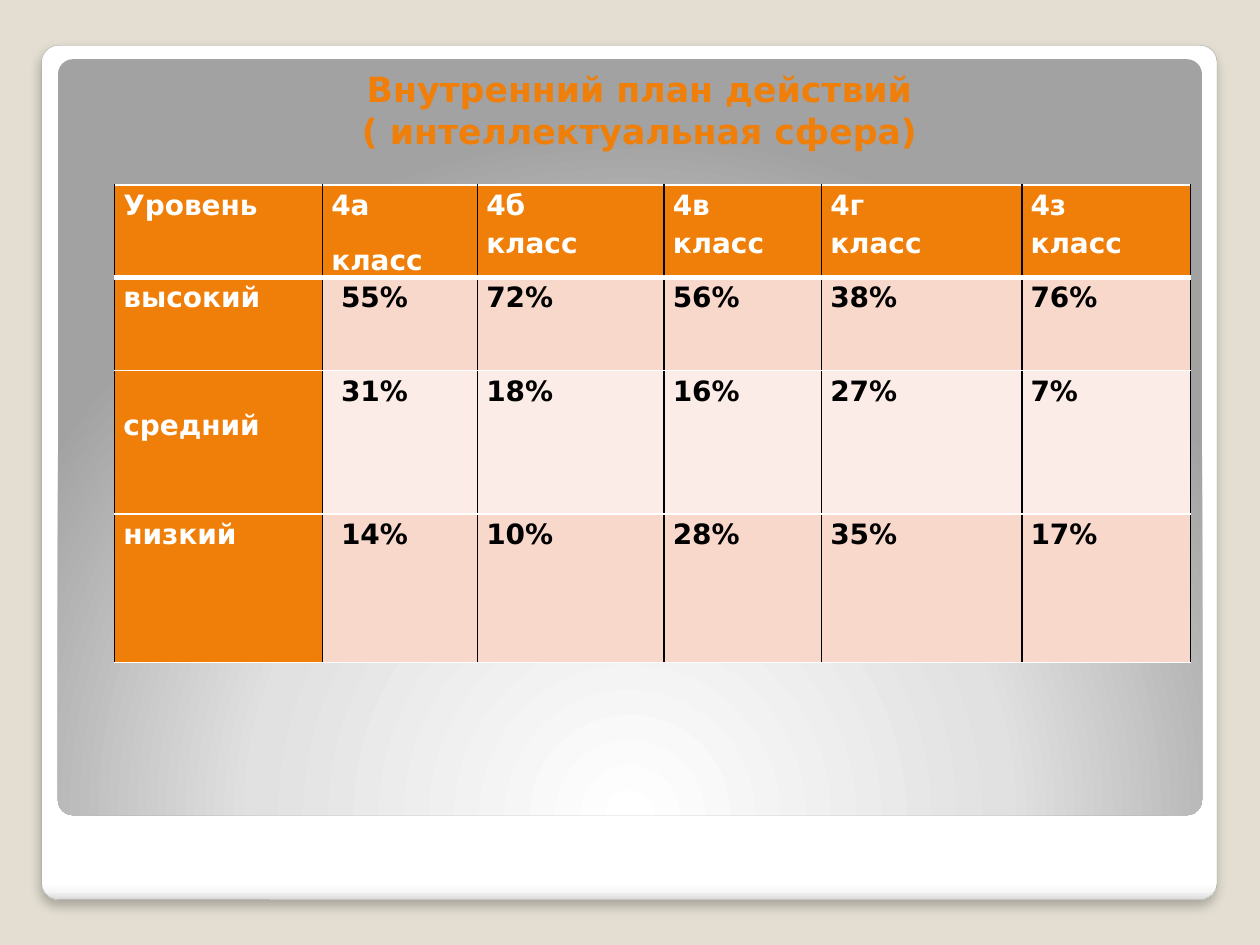
from pptx import Presentation
from pptx.dml.color import RGBColor
from pptx.enum.shapes import MSO_SHAPE
from pptx.enum.text import MSO_ANCHOR, MSO_AUTO_SIZE, PP_ALIGN
from pptx.oxml import parse_xml
from pptx.oxml.ns import nsdecls, qn
from pptx.util import Inches, Pt

TITLE = "Внутренний план действий\v( интеллектуальная сфера)"
HEADER = ["Уровень", "4а\nкласс", "4б\nкласс", "4в\nкласс", "4г\nкласс", "4з\nкласс"]
LEVELS = [
    ["высокий", " 55%", "72%", "56%", "38%", "76%"],
    ["средний", " 31%", "18%", "16%", "27%", "7%"],
    ["низкий", " 14%", "10%", "28%", "35%", "17%"],
]
COLUMN_WIDTHS = [1.65, 1.23, 1.48, 1.25, 1.59, 1.34]
ROW_HEIGHTS = [0.73, 0.74, 1.14, 1.18]
LOWERED_LEVEL = "средний"
SPACED_HEADING = "4а\nкласс"

COLORS = {
    "background": "E3DED1",
    "accent": "F07F09",
    "band_dark": "F9D8CC",
    "band_light": "FCECE7",
    "white": "FFFFFF",
    "black": "000000",
    "frame_edge": "A4A4A4",
}
FONT = "DejaVu Sans"
TITLE_FONT = {"name": FONT, "size": Pt(19.8), "bold": True}
CELL_FONT = {"name": FONT, "size": Pt(16), "bold": True}
CELL_MARGINS = {
    "margin_left": Inches(0.07),
    "margin_right": Inches(0.07),
    "margin_top": 0,
    "margin_bottom": 0,
}
PANELS = [
    {
        "box": (0.33, 0.36, 9.33, 6.78),
        "stops": [(0, "FFFFFF"), (98, "FFFFFF"), (99, "F7F7F7"), (100, "DADADA")],
        "direction": '<a:lin ang="5400000" scaled="0"/>',
        "framed": True,
    },
    {
        "box": (0.46, 0.47, 9.08, 6),
        "stops": [(0, "FFFFFF"), (55, "E1E1E1"), (100, "A2A2A2")],
        "direction": '<a:path path="circle"><a:fillToRect l="50000" t="175000" '
                     'r="50000" b="-75000"/></a:path>',
        "framed": False,
    },
]


def rgb(name):
    return RGBColor.from_string(COLORS[name])


def apply(target, values):
    for attribute, value in values.items():
        setattr(target, attribute, value)


def paint_gradient(panel, stops, direction):
    panel.fill.gradient()
    properties = panel._element.spPr
    stop_list = "".join(
        f'<a:gs pos="{position * 1000}"><a:srgbClr val="{color}"/></a:gs>'
        for position, color in stops
    )
    gradient = parse_xml(
        f'<a:gradFill {nsdecls("a")} rotWithShape="1">'
        f"<a:gsLst>{stop_list}</a:gsLst>{direction}</a:gradFill>"
    )
    properties.replace(properties.find(qn("a:gradFill")), gradient)


def add_panel(slide, box, stops, direction, framed):
    panel = slide.shapes.add_shape(MSO_SHAPE.ROUNDED_RECTANGLE, *map(Inches, box))
    panel.adjustments[0] = 0.02
    paint_gradient(panel, stops, direction)
    panel.shadow.inherit = False
    if framed:
        panel.line.color.rgb = rgb("frame_edge")
        panel.line.width = Pt(0.16)
        panel._element.spPr.find(qn("a:effectLst")).append(parse_xml(
            f'<a:outerShdw {nsdecls("a")} blurRad="{Pt(6)}" dist="{Pt(4)}" '
            'dir="5400000" rotWithShape="0"><a:srgbClr val="000000">'
            '<a:alpha val="25000"/></a:srgbClr></a:outerShdw>'
        ))
    else:
        panel.line.fill.background()
    return panel


def set_border(cell, side, color, width):
    properties = cell._tc.get_or_add_tcPr()
    border = parse_xml(
        f'<a:{side} {nsdecls("a")} w="{Pt(width)}"><a:solidFill>'
        f'<a:srgbClr val="{COLORS[color]}"/></a:solidFill></a:{side}>'
    )
    properties.insert(len(properties.findall("*")) - 1, border)


def format_cell(cell, text, row, column):
    labelled = row == 0 or column == 0
    band = "band_dark" if row % 2 else "band_light"
    cell.fill.solid()
    cell.fill.fore_color.rgb = rgb("accent" if labelled else band)
    for side, color, width in (
        ("lnL", "black", 1),
        ("lnR", "black", 1),
        ("lnT", "white", 3 if row == 1 else 1),
        ("lnB", "white", 3 if row == 0 else 1),
    ):
        set_border(cell, side, color, width)
    apply(cell, CELL_MARGINS)
    if text == LOWERED_LEVEL:
        cell.margin_top = Inches(0.27)
    cell.text = text
    for paragraph in cell.text_frame.paragraphs:
        paragraph.line_spacing = 1.15
        if text == SPACED_HEADING:
            paragraph.space_after = Pt(10)
        for run in paragraph.runs:
            apply(run.font, CELL_FONT)
            run.font.color.rgb = rgb("white" if labelled else "black")


def add_level_table(slide):
    rows = [HEADER] + LEVELS
    table = slide.shapes.add_table(
        len(rows), len(HEADER), Inches(0.91), Inches(1.47),
        Inches(sum(COLUMN_WIDTHS)), Inches(sum(ROW_HEIGHTS)),
    ).table
    table.first_col = True
    for column, width in zip(table.columns, COLUMN_WIDTHS):
        column.width = Inches(width)
    for row, height in zip(table.rows, ROW_HEIGHTS):
        row.height = Inches(height)
    for row, texts in enumerate(rows):
        for column, text in enumerate(texts):
            format_cell(table.cell(row, column), text, row, column)


def format_title(title):
    box = map(Inches, (0.35, 0.44, 9.45, 0.81))
    apply(title, dict(zip(("left", "top", "width", "height"), box)))
    frame = title.text_frame
    apply(frame, {
        "auto_size": MSO_AUTO_SIZE.NONE,
        "vertical_anchor": MSO_ANCHOR.BOTTOM,
        "word_wrap": True,
    })
    heading = frame.paragraphs[0]
    heading.text = TITLE
    heading.alignment = PP_ALIGN.CENTER
    for run in heading.runs:
        apply(run.font, TITLE_FONT)
        run.font.color.rgb = rgb("accent")


def main():
    deck = Presentation()
    apply(deck, {"slide_width": Inches(10), "slide_height": Inches(7.5)})
    slide = deck.slides.add_slide(deck.slide_layouts[5])
    slide.background.fill.solid()
    slide.background.fill.fore_color.rgb = rgb("background")
    title = slide.shapes.title
    for panel in PANELS:
        title._element.addprevious(add_panel(slide, **panel)._element)
    format_title(title)
    add_level_table(slide)
    deck.save("out.pptx")


if __name__ == "__main__":
    main()
